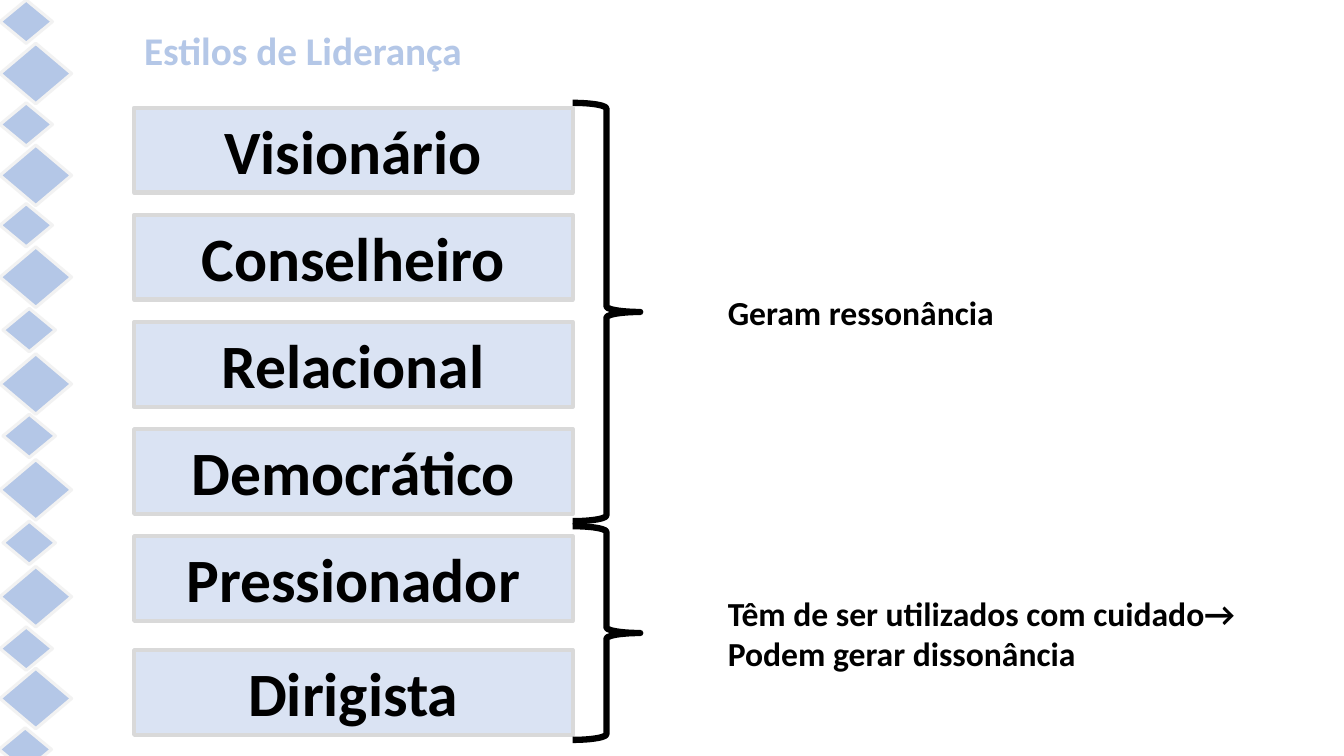
from pptx import Presentation
from pptx.dml.color import RGBColor
from pptx.enum.shapes import MSO_SHAPE as SHAPE
from pptx.enum.text import MSO_ANCHOR as ANCHOR, MSO_AUTO_SIZE as FIT, PP_ALIGN as ALIGN
from pptx.util import Inches, Pt

COLORS = {"blue": "B4C7E7", "pale": "DAE3F3", "edge": "F2F2F2",
          "grey": "D9D9D9", "black": "000000"}
STYLES = ["Visionário", "Conselheiro", "Relacional",
          "Democrático", "Pressionador", "Dirigista"]
LARGE_TOPS = [0.43, 1.44, 2.45, 3.51, 4.56, 5.62, 6.63]
SMALL_SPOTS = [(0, 0), (0, 1.02), (0, 2.02), (0.03, 3.06),
               (0.03, 4.11), (0.03, 5.17), (0, 6.22), (-0.01, 7.22)]


def rgb(name):
    """Return the named colour."""
    return RGBColor.from_string(COLORS[name])


def add_shape(s, kind, box, fill, line, width):
    """Add a flat preset shape, unfilled if fill is None."""
    sp = s.shapes.add_shape(kind, *map(Inches, box))
    sp.shadow.inherit = False
    if fill:
        sp.fill.solid()
        sp.fill.fore_color.rgb = rgb(fill)
    else:
        sp.fill.background()
    sp.line.color.rgb = rgb(line)
    sp.line.width = Pt(width)
    return sp


def write(sp, text, size, color="black", align=ALIGN.LEFT, anchor=ANCHOR.TOP):
    """Write one bold paragraph in a shape that grows with its text."""
    tf = sp.text_frame
    tf.word_wrap = True
    tf.auto_size = FIT.SHAPE_TO_FIT_TEXT
    tf.vertical_anchor = anchor
    p = tf.paragraphs[0]
    p.text = text
    p.alignment = align
    p.font.name = "Calibri"
    p.font.size = Pt(size)
    p.font.bold = True
    p.font.color.rgb = rgb(color)


def add_label(s, box, text, size, color="black"):
    """Add a text box."""
    write(s.shapes.add_textbox(*map(Inches, box)), text, size, color)


def add_border(s, left, top):
    """Add the column of large and small diamonds."""
    large = [(left, top + y, 0.71, 0.6) for y in LARGE_TOPS]
    small = [(left + x, top + y, 0.52, 0.43) for x, y in SMALL_SPOTS]
    for box in small[:1] + large + small[1:]:
        add_shape(s, SHAPE.DIAMOND, box, "blue", "edge", 2.25)


def add_styles(s, left, top, width, height):
    """Stack the style boxes, the last one at the bottom of the area."""
    box_height, pitch = 0.84, 1.0625
    for i, style in enumerate(STYLES):
        last = i == len(STYLES) - 1
        y = top + (height - box_height if last else i * pitch)
        sp = add_shape(s, SHAPE.RECTANGLE, (left, y, width, box_height),
                       "pale", "grey", 3)
        write(sp, style, 44, align=ALIGN.CENTER)


def add_group(s, left, top, height, text, label_box):
    """Add a brace with its label, placed relative to the brace."""
    add_shape(s, SHAPE.RIGHT_BRACE, (left, top, 0.67, height), None, "black", 4.5)
    x, y, w, h = label_box
    add_label(s, (left + x, top + y, w, h), text, 24)


def main():
    """Build the slide."""
    prs = Presentation()
    prs.slide_width, prs.slide_height = Inches(13.33), Inches(7.5)
    s = prs.slides.add_slide(prs.slide_layouts[6])
    add_border(s, 0, 0)
    add_label(s, (1.33, 0.21, 8.21, 0.57), "Estilos de Liderança", 28, "blue")
    add_styles(s, 1.33, 1.07, 4.35, 6.22)
    add_group(s, 5.68, 1.02, 4.15, "Geram ressonância", (1.44, 1.83, 4.21, 0.5))
    add_group(s, 5.68, 5.22, 2.12,
              "Têm de ser utilizados com cuidado→ Podem gerar dissonância",
              (1.44, 0.61, 5.24, 0.91))
    prs.save("out.pptx")


if __name__ == "__main__":
    main()
